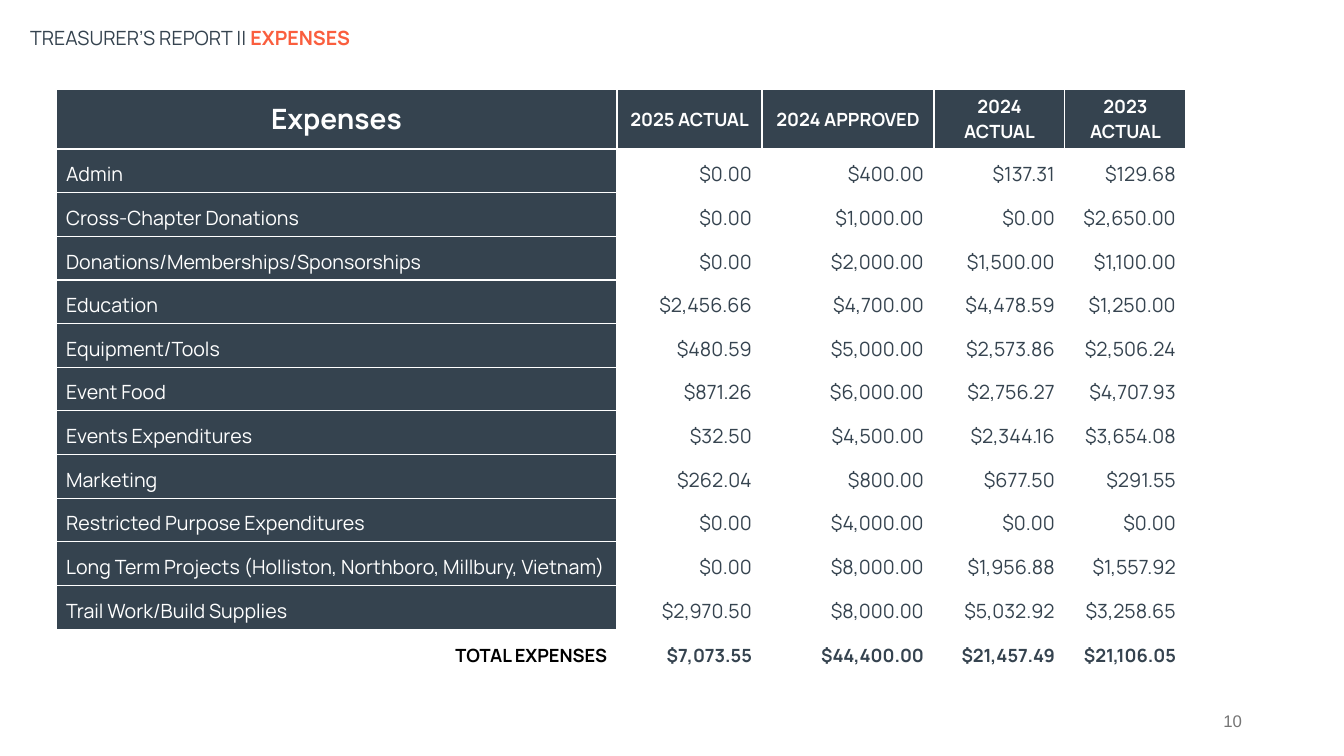
from lxml.etree import SubElement
from pptx import Presentation
from pptx.dml.color import RGBColor as RGB
from pptx.enum.text import MSO_ANCHOR as Anchor, PP_ALIGN as Align
from pptx.oxml.ns import qn
from pptx.util import Pt

SCALE = 914400 / 100.8
COLORS = {"slate": "35434F", "orange": "FA5E3E", "white": "FFFFFF",
          "black": "000000", "gray": "757575"}


def px(n):
    return round(n * SCALE)


def write(frame, text, size=14, color="slate", bold=False, font="Manrope",
          align=Align.LEFT, anchor=Anchor.MIDDLE):
    """Add a run to the first paragraph of a text frame and format it."""
    frame.word_wrap = True
    frame.vertical_anchor = anchor
    para = frame.paragraphs[0]
    para.alignment = align
    run = para.add_run()
    run.text = text
    run.font.size = Pt(size)
    run.font.name = font
    run.font.bold = bold
    run.font.color.rgb = RGB.from_string(COLORS[color])


prs = Presentation()
prs.slide_width, prs.slide_height = px(1344), px(756)
slide = prs.slides.add_slide(prs.slide_layouts[5])

# Title
title = slide.shapes.title
title.left, title.top, title.width, title.height = px(20), px(18), px(1159), px(40)
write(title.text_frame, "TREASURER’S REPORT || ", align=Align.JUSTIFY)
write(title.text_frame, "EXPENSES", color="orange", bold=True, align=Align.JUSTIFY)

# Expense table
rows = [
    ("Expenses", "2025 ACTUAL", "2024 APPROVED", "2024 ACTUAL", "2023 ACTUAL"),
    ("Admin", "$0.00", "$400.00", "$137.31", "$129.68"),
    ("Cross-Chapter Donations", "$0.00", "$1,000.00", "$0.00", "$2,650.00"),
    ("Donations/Memberships/Sponsorships", "$0.00", "$2,000.00", "$1,500.00", "$1,100.00"),
    ("Education", "$2,456.66", "$4,700.00", "$4,478.59", "$1,250.00"),
    ("Equipment/Tools", "$480.59", "$5,000.00", "$2,573.86", "$2,506.24"),
    ("Event Food", "$871.26", "$6,000.00", "$2,756.27", "$4,707.93"),
    ("Events Expenditures", "$32.50", "$4,500.00", "$2,344.16", "$3,654.08"),
    ("Marketing", "$262.04", "$800.00", "$677.50", "$291.55"),
    ("Restricted Purpose Expenditures", "$0.00", "$4,000.00", "$0.00", "$0.00"),
    ("Long Term Projects (Holliston, Northboro, Millbury, Vietnam)",
     "$0.00", "$8,000.00", "$1,956.88", "$1,557.92"),
    ("Trail Work/Build Supplies", "$2,970.50", "$8,000.00", "$5,032.92", "$3,258.65"),
    ("TOTAL EXPENSES", "$7,073.55", "$44,400.00", "$21,457.49", "$21,106.05"),
]
widths = [561, 145, 172, 131, 121]
head, body = 60, 524
last = len(rows) - 1

table = slide.shapes.add_table(len(rows), len(widths), px(56), px(89),
                               px(sum(widths)), px(head + body)).table
table.first_row = table.horz_banding = False
for col, width in zip(table.columns, widths):
    col.width = px(width)
for r, row in enumerate(rows):
    table.rows[r].height = px(body / last if r else head)
    for c, text in enumerate(row):
        cell = table.cell(r, c)
        props = cell._tc.get_or_add_tcPr()
        for side in ("lnL", "lnR", "lnT", "lnB"):
            line = SubElement(props, qn(f"a:{side}"), w=str(Pt(1)))
            fill = SubElement(line, qn("a:solidFill"))
            SubElement(fill, qn("a:srgbClr"), val=COLORS["white"])

        dark = r == 0 or (c == 0 and r < last)
        if dark:
            cell.fill.solid()
            cell.fill.fore_color.rgb = RGB.from_string(COLORS["slate"])
        else:
            cell.fill.background()

        bold = r in (0, last)
        size = 20 if r == c == 0 else 13 if bold else 14
        color = "white" if dark else "black" if c == 0 else "slate"
        align = Align.CENTER if r == 0 else Align.LEFT if dark else Align.RIGHT
        cell.vertical_anchor = Anchor.BOTTOM if r else Anchor.MIDDLE
        write(cell.text_frame, text, size, color, bold, align=align,
              anchor=cell.vertical_anchor)

# Page number
page = slide.shapes.add_textbox(px(950), px(701), px(302), px(40))
write(page.text_frame, "10", 12, "gray", font="Arial", align=Align.RIGHT)

prs.save("out.pptx")
